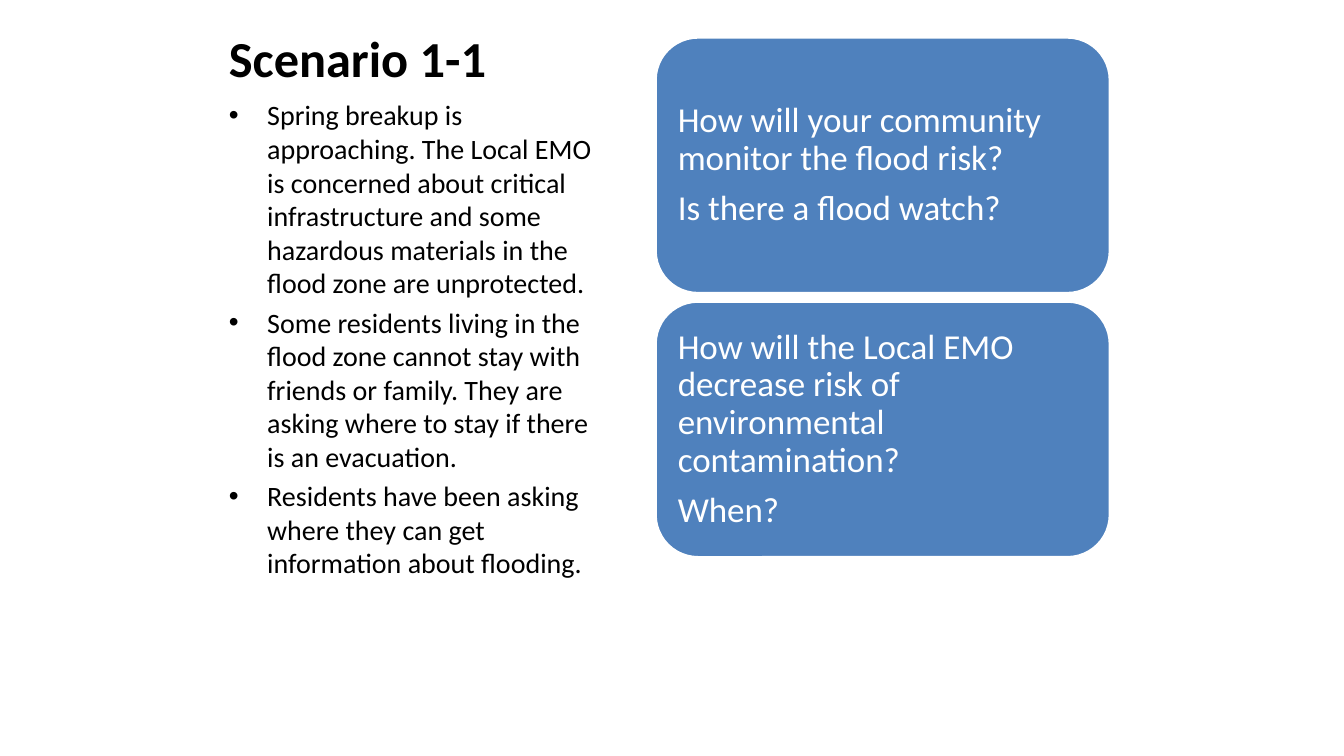
from dataclasses import dataclass

from pptx import Presentation
from pptx.dml.color import RGBColor
from pptx.enum.shapes import MSO_SHAPE
from pptx.enum.text import MSO_ANCHOR as Anchor, MSO_AUTO_SIZE as AutoSize, PP_ALIGN as Align
from pptx.util import Pt

EMU_PER_PX = 9144


@dataclass(frozen=True)
class Theme:
    """Colours, font and type sizes of the slide."""
    font: str = "Calibri"
    text: RGBColor = RGBColor(0, 0, 0)
    card: RGBColor = RGBColor(0x4F, 0x81, 0xBD)
    white: RGBColor = RGBColor(0xFF, 0xFF, 0xFF)
    title_size: int = 36
    body_size: int = 20
    card_size: int = 25


THEME = Theme()
SITUATION = [
    "Spring breakup is approaching. The Local EMO is concerned about critical "
    "infrastructure and some hazardous materials in the flood zone are unprotected.",
    "Some residents living in the flood zone cannot stay with friends or family. "
    "They are asking where to stay if there is an evacuation.",
    "Residents have been asking where they can get information about flooding.",
]
QUESTIONS = [
    ["How will your community monitor the flood risk?", "Is there a flood watch?"],
    ["How will the Local EMO decrease risk of environmental contamination?", "When?"],
]
CARD_TOP, CARD_HEIGHT, CARD_GAP = 37, 254, 8


def px(length):
    """Turn px into EMU."""
    return length * EMU_PER_PX


def place(shape, left, top, width, height):
    """Move and size a shape in px."""
    shape.left, shape.top = px(left), px(top)
    shape.width, shape.height = px(width), px(height)


def fill_text(shape, texts, size, color, anchor, bold=False):
    """Write left-aligned paragraphs into a shape and return them."""
    frame = shape.text_frame
    frame.text = "\n".join(texts)
    frame.word_wrap = True
    frame.auto_size = AutoSize.NONE
    frame.vertical_anchor = anchor
    for paragraph in frame.paragraphs:
        paragraph.alignment = Align.LEFT
        paragraph.font.name = THEME.font
        paragraph.font.size = Pt(size)
        paragraph.font.bold = bold
        paragraph.font.color.rgb = color
    return frame.paragraphs


def add_title(slide, text):
    """Fill the title placeholder."""
    title = slide.shapes.title
    place(title, 217, 30, 329, 62)
    fill_text(title, [text], THEME.title_size, THEME.text, Anchor.BOTTOM, bold=True)


def add_bullets(slide, texts):
    """Fill the body placeholder with a bulleted list."""
    body = slide.placeholders[1]
    place(body, 217, 92, 400, 410)
    paragraphs = fill_text(body, texts, THEME.body_size, THEME.text, Anchor.TOP)
    for index, paragraph in enumerate(paragraphs):
        properties = paragraph._p.get_or_add_pPr()
        properties.set("marL", str(px(38)))
        properties.set("indent", str(px(-38)))
        paragraph.space_before = Pt(4 if index else 0)


def add_question_card(slide, top, texts):
    """Add a rounded card with its questions."""
    card = slide.shapes.add_shape(
        MSO_SHAPE.ROUNDED_RECTANGLE, px(650), px(top), px(451), px(CARD_HEIGHT))
    card.shadow.inherit = False
    card.fill.solid()
    card.fill.fore_color.rgb = THEME.card
    card.line.color.rgb = THEME.white
    card.line.width = Pt(2)
    frame = card.text_frame
    frame.margin_left = frame.margin_right = px(10)
    frame.margin_top = frame.margin_bottom = px(10)
    for paragraph in fill_text(card, texts, THEME.card_size, THEME.white, Anchor.MIDDLE):
        paragraph.line_spacing = 0.9
        paragraph.space_after = Pt(8.75)


def main():
    """Build and save the slide."""
    presentation = Presentation()
    presentation.slide_width, presentation.slide_height = px(1333), px(750)
    slide = presentation.slides.add_slide(presentation.slide_layouts[1])
    add_title(slide, "Scenario 1-1")
    add_bullets(slide, SITUATION)
    for index, texts in enumerate(QUESTIONS):
        add_question_card(slide, CARD_TOP + index * (CARD_HEIGHT + CARD_GAP), texts)
    presentation.save("out.pptx")


if __name__ == "__main__":
    main()
